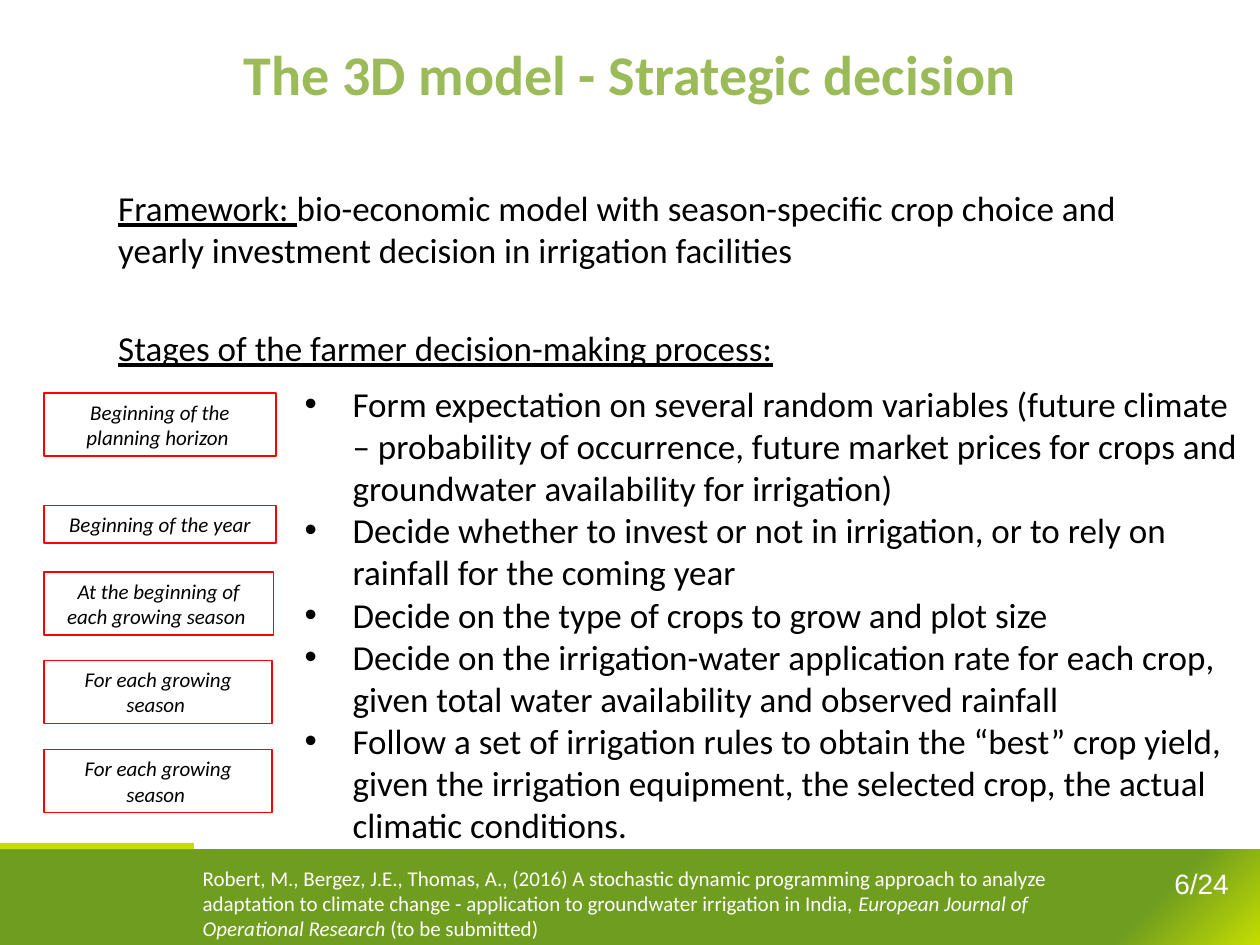
from lxml import etree
from pptx import Presentation
from pptx.dml.color import RGBColor
from pptx.enum.shapes import MSO_SHAPE
from pptx.enum.text import MSO_ANCHOR, PP_ALIGN
from pptx.oxml import parse_xml
from pptx.oxml.ns import nsdecls, qn
from pptx.util import Inches, Pt

TITLE_GREEN = RGBColor(0x9B, 0xBB, 0x59)
BAR_GREEN = RGBColor(0x6F, 0x9D, 0x20)
LIME = RGBColor(0xC5, 0xDD, 0x01)
RED = RGBColor(0xFF, 0, 0)
BLACK = RGBColor(0, 0, 0)
WHITE = RGBColor(0xFF, 0xFF, 0xFF)

# Timing label: text, top, width, height
TIMINGS = [
    ("Beginning of the planning horizon ", 3.12, 1.84, 0.5),
    ("Beginning of the year", 4.01, 1.84, 0.3),
    ("At the beginning of each growing season ", 4.54, 1.82, 0.5),
    ("For each growing season ", 5.24, 1.81, 0.5),
    ("For each growing season ", 5.95, 1.81, 0.5),
]
STAGES = [
    "Form expectation on several random variables (future climate – probability "
    "of occurrence, future market prices for crops and groundwater availability "
    "for irrigation)",
    "Decide whether to invest or not in irrigation, or to rely on rainfall for "
    "the coming year",
    "Decide on the type of crops to grow and plot size",
    "Decide on the irrigation-water application rate for each crop, given total "
    "water availability and observed rainfall",
    "Follow a set of irrigation rules to obtain the “best” crop yield, given the "
    "irrigation equipment, the selected crop, the actual climatic conditions.",
]


def add_run(p, text, size, color=BLACK, name="Calibri", **formats):
    r = p.add_run()
    r.text = text
    r.font.color.rgb = color
    for key, value in {"size": Pt(size), "name": name, **formats}.items():
        setattr(r.font, key, value)


def add_text(slide, box):
    tf = slide.shapes.add_textbox(*map(Inches, box)).text_frame
    tf.word_wrap = True
    return tf


def add_box(slide, box):
    sp = slide.shapes.add_shape(MSO_SHAPE.RECTANGLE, *map(Inches, box))
    sp.shadow.inherit = False
    return sp


def add_corner_glow(sp):
    """Fill with green that turns lime at the bottom right corner."""
    stops = "".join(
        f'<a:gs pos="{pos * 1000}"><a:srgbClr val="{color}"/></a:gs>'
        for pos, color in [(0, LIME), (11, BAR_GREEN), (100, BAR_GREEN)])
    sp.fill.background()
    no_fill = sp._element.spPr.find(qn("a:noFill"))
    no_fill.getparent().replace(no_fill, parse_xml(
        f'<a:gradFill {nsdecls("a")} rotWithShape="1"><a:gsLst>{stops}</a:gsLst>'
        '<a:path path="circle"><a:fillToRect l="100000" t="100000"/></a:path>'
        '</a:gradFill>'))


def add_footer(slide, left, top, width, height):
    bar = add_box(slide, (left, top, width, height))
    add_corner_glow(bar)
    accent = add_box(slide, (left, top - 0.05, 1.54, 0.05))
    accent.fill.solid()
    accent.fill.fore_color.rgb = LIME
    for sp in (bar, accent):
        sp.line.fill.background()

    p = add_text(slide, (left + 8.62, top + 0.09, 1.23, 0.27)).paragraphs[0]
    p.alignment = PP_ALIGN.RIGHT
    add_run(p, "6/24", 16, WHITE, "Arial")

    p = add_text(slide, (left + 1.51, top + 0.08, 7.43, 0.71)).paragraphs[0]
    add_run(p, "Robert, M., Bergez, J.E., Thomas, A., (2016) A stochastic dynamic "
            "programming approach to analyze adaptation to climate change - "
            "application to groundwater irrigation in India, ", 12, WHITE)
    add_run(p, "European Journal of Operational Research", 12, WHITE, italic=True)
    add_run(p, " (to be submitted)", 12, WHITE)


def add_title(slide, *box):
    p = add_text(slide, box).paragraphs[0]
    p.alignment = PP_ALIGN.CENTER
    p.line_spacing = 1.5
    add_run(p, "The 3D model - Strategic decision", 32, TITLE_GREEN, bold=True)


def add_framework(slide, *box):
    tf = add_text(slide, box)
    p = tf.paragraphs[0]
    add_run(p, "Framework: ", 20, underline=True)
    add_run(p, "bio-economic model with season-specific crop choice and yearly "
            "investment decision in irrigation facilities", 20)
    p = tf.add_paragraph()
    p.space_before = Pt(32)
    add_run(p, "Stages of the farmer decision-making process:", 20, underline=True)


def add_timings(slide, left):
    for text, top, width, height in TIMINGS:
        sp = add_box(slide, (left, top, width, height))
        sp.fill.background()
        sp.line.color.rgb = RED
        sp.line.width = Pt(0.75)
        tf = sp.text_frame
        tf.word_wrap = True
        tf.vertical_anchor = MSO_ANCHOR.TOP
        p = tf.paragraphs[0]
        p.alignment = PP_ALIGN.CENTER
        add_run(p, text, 12, italic=True)


def add_stages(slide, *box):
    tf = add_text(slide, box)
    indent = Inches(0.38)
    for i, text in enumerate(STAGES):
        p = tf.add_paragraph() if i else tf.paragraphs[0]
        pPr = p._p.get_or_add_pPr()
        pPr.set("marL", str(indent))
        pPr.set("indent", str(-indent))
        etree.SubElement(pPr, qn("a:buFont")).set("typeface", "Arial")
        etree.SubElement(pPr, qn("a:buChar")).set("char", "•")
        add_run(p, text, 20)


def main():
    prs = Presentation()
    prs.slide_width, prs.slide_height = Inches(10), Inches(7.5)
    slide = prs.slides.add_slide(prs.slide_layouts[6])
    add_footer(slide, 0, 6.74, 10, 0.76)
    add_title(slide, 0, 0, 10, 0.91)
    add_framework(slide, 0.84, 1.43, 8.7, 1.55)
    add_timings(slide, 0.35)
    add_stages(slide, 2.32, 2.99, 7.65, 3.8)
    prs.save("out.pptx")


if __name__ == "__main__":
    main()
